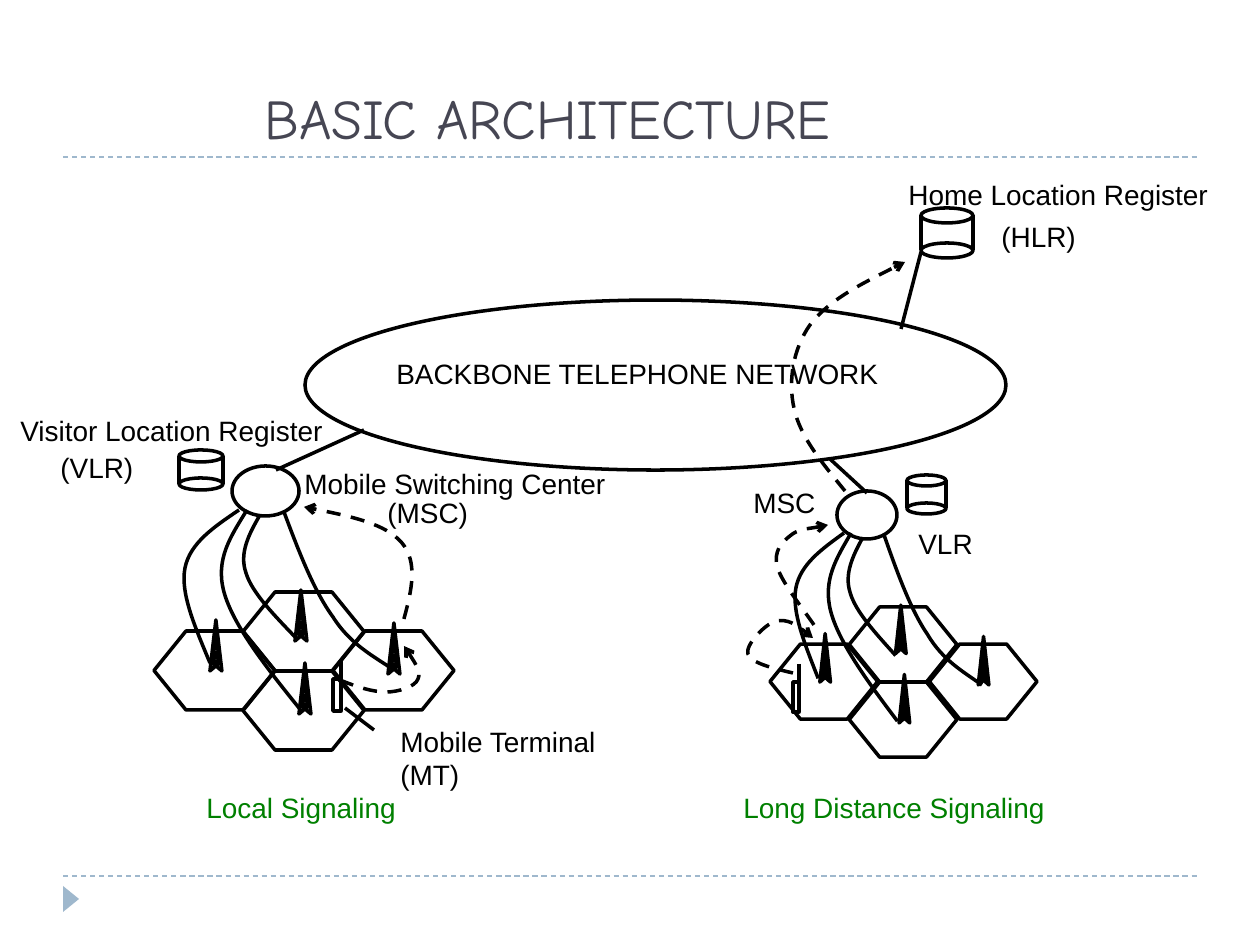
import pptx
import pptx.dml.color
import pptx.enum.dml
import pptx.enum.shapes
import pptx.enum.text
import pptx.oxml.ns
import pptx.util
from lxml import etree

EMU_PER_PX = 914400 / 126
BLACK = "000000"
GREEN = "008000"
PALE_BLUE = "9FB8CD"
SHAPES = pptx.enum.shapes.MSO_SHAPE
qn = pptx.oxml.ns.qn

CELL_SIZE = (121, 79)
CELLS = [(89, 0), (0, 39), (89, 79), (179, 39)]
ANTENNAS = [(56, 28), (234, 31), (145, 71), (141, -2)]
LINKS = [
    [(-29, 153), (-44, 117), (-59, 83), (-54, 58), (-49, 33), (-25, 17), (0, 0)],
    [(155, 160), (134, 146), (111, 134), (94, 107), (75, 81), (60, 42), (45, 2)],
    [(60, 198), (27, 157), (-6, 115), (-15, 82), (-24, 49), (-8, 26), (8, 0)],
    [(58, 129), (36, 106), (13, 83), (7, 63), (0, 43), (10, 24), (21, 5)],
]
SIGNALS = [
    [(404, 619), (412, 590), (418, 562), (402, 543), (386, 524), (345, 515), (304, 507)],
    [(340, 680), (357, 687), (373, 692), (386, 692), (398, 692),
     (415, 687), (418, 679), (421, 672), (413, 659), (404, 646)],
    [(793, 673), (772, 668), (751, 663), (748, 654), (745, 645),
     (765, 624), (776, 621), (788, 619), (800, 627), (813, 638)],
    [(814, 625), (798, 602), (781, 581), (777, 566), (774, 551),
     (781, 543), (790, 536), (798, 529), (822, 527), (828, 525)],
    [(845, 491), (823, 464), (800, 437), (794, 408), (788, 381),
     (793, 349), (810, 325), (829, 300), (867, 281), (905, 262)],
]
LABELS = [
    ("BACKBONE TELEPHONE NETWORK", 384, 350, 518, BLACK),
    ("(HLR)", 989, 213, 102, BLACK),
    ("Mobile Switching Center", 292, 460, 350, BLACK),
    ("Visitor Location Register", 8, 407, 357, BLACK),
    ("Mobile Terminal\n(MT)", 388, 718, 239, BLACK),
    ("MSC", 741, 479, 87, BLACK),
    ("VLR", 906, 520, 81, BLACK),
    ("Local Signaling", 194, 784, 232, GREEN),
    ("Long Distance Signaling", 731, 784, 352, GREEN),
    ("(MSC)", 375, 489, 106, BLACK),
    ("(VLR)", 48, 444, 100, BLACK),
    ("Home Location Register", 896, 171, 348, BLACK),
]


def px(length):
    return pptx.util.Emu(round(length * EMU_PER_PX))


def rgb(value):
    return pptx.dml.color.RGBColor.from_string(value)


def style_line(shape, color=BLACK, width=2, dashed=False):
    shape.line.color.rgb = rgb(color)
    shape.line.width = pptx.util.Pt(width)
    if dashed:
        shape.line.dash_style = pptx.enum.dml.MSO_LINE.DASH


def add_text(slide, text, left, top, width, height=47, size=16, font="Arial",
             color=BLACK, anchor=pptx.enum.text.MSO_ANCHOR.TOP, fit=True):
    box = slide.shapes.add_textbox(px(left), px(top), px(width), px(height))
    frame = box.text_frame
    frame.word_wrap = not fit
    if fit:
        frame.auto_size = pptx.enum.text.MSO_AUTO_SIZE.SHAPE_TO_FIT_TEXT
    frame.vertical_anchor = anchor
    frame.text = text
    for paragraph in frame.paragraphs:
        paragraph.font.size = pptx.util.Pt(size)
        paragraph.font.name = font
        paragraph.font.color.rgb = rgb(color)


def add_outline(shapes, kind, left, top, width, height):
    shape = shapes.add_shape(kind, px(left), px(top), px(width), px(height))
    shape.shadow.inherit = False
    shape.fill.background()
    style_line(shape)
    return shape


def add_line(shapes, start, end, **line_format):
    line = shapes.add_connector(pptx.enum.shapes.MSO_CONNECTOR.STRAIGHT,
                                px(start[0]), px(start[1]), px(end[0]), px(end[1]))
    style_line(line, **line_format)
    etree.SubElement(line._element.spPr, qn("a:effectLst"))


def add_path(shapes, points, closed=False, dashed=False):
    corners = [(px(x), px(y)) for x, y in points]
    builder = shapes.build_freeform(*corners[0], scale=1.0)
    builder.add_line_segments(corners[1:], close=closed)
    shape = builder.convert_to_shape()
    shape.shadow.inherit = False
    shape.fill.background()
    style_line(shape, dashed=dashed)
    return shape


def add_curve(shapes, points, signal=False):
    shape = add_path(shapes, points, dashed=signal)
    path = next(shape._element.iter(qn("a:path")))
    segments = path.findall(qn("a:lnTo"))
    for first in range(0, len(segments), 3):
        curve = etree.SubElement(path, qn("a:cubicBezTo"))
        for segment in segments[first:first + 3]:
            curve.append(segment[0])
            path.remove(segment)
    if signal:
        etree.SubElement(shape.line._get_or_add_ln(), qn("a:tailEnd"), type="arrow")


def add_register(slide, left, top, width, rim, drop):
    group = slide.shapes.add_group_shape().shapes
    middle = top + rim / 2
    for rim_top in (top, top + drop):
        add_outline(group, SHAPES.OVAL, left, rim_top, width, rim)
    for side in (left, left + width):
        add_line(group, (side, middle), (side, middle + drop))


def add_antenna(shapes, left, top, width, height):
    levels = [0.2, 0.3, 0.45, 0.64, 0.82]
    outline = [(0, 1), (0.5, 0), (1, 1)]
    for level in levels[:0:-1] + levels:
        outline += [((1 - level) / 2, level), ((1 + level) / 2, level)]
    add_path(shapes, [(left + x * width, top + y * height) for x, y in outline], closed=True)


def add_cells(slide, left, top, scale_x, scale_y):
    group = slide.shapes.add_group_shape().shapes
    for x, y in CELLS:
        cell = add_outline(group, SHAPES.HEXAGON, left + x * scale_x, top + y * scale_y,
                           CELL_SIZE[0] * scale_x, CELL_SIZE[1] * scale_y)
        cell.adjustments[0] = 0.405
    for x, y in ANTENNAS:
        add_antenna(group, left + x * scale_x, top + y * scale_y, 12 * scale_x, 51 * scale_y)


def add_links(slide, left, top, scale_x, scale_y):
    for link in LINKS:
        add_curve(slide.shapes, [(left + x * scale_x, top + y * scale_y) for x, y in link])


def add_terminal(slide, left, top, width, height):
    group = slide.shapes.add_group_shape().shapes
    add_outline(group, SHAPES.RECTANGLE, left, top, width, height)
    add_line(group, (left + width, top - 18), (left + width, top))


def add_frame(slide):
    for y in (876, 157):
        add_line(slide.shapes, (63, y), (1197, y), color=PALE_BLUE, width=0.75, dashed=True)
    marker = add_outline(slide.shapes, SHAPES.ISOSCELES_TRIANGLE, 58, 891, 26, 16)
    marker.rotation = 90
    marker.fill.solid()
    marker.fill.fore_color.rgb = rgb(PALE_BLUE)
    marker.line.fill.background()
    add_text(slide, "BASIC ARCHITECTURE", 252, 0, 927, height=157, size=32,
             font="Comic Neue", color="464653",
             anchor=pptx.enum.text.MSO_ANCHOR.BOTTOM, fit=False)


def main():
    presentation = pptx.Presentation()
    presentation.slide_width, presentation.slide_height = px(1260), px(945)
    slide = presentation.slides.add_slide(presentation.slide_layouts[6])
    add_frame(slide)
    for oval in [(305, 300, 701, 170), (232, 466, 67, 50), (837, 491, 60, 48)]:
        add_outline(slide.shapes, SHAPES.OVAL, *oval)
    for register in [(921, 208, 52, 15, 35), (179, 450, 44, 12, 28), (907, 475, 39, 11, 28)]:
        add_register(slide, *register)
    for start, end in [((276, 470), (364, 430)), ((830, 459), (867, 493)),
                       ((921, 252), (901, 329)), ((374, 730), (345, 708))]:
        add_line(slide.shapes, start, end)
    for cells, links, scale in [((154, 592), (239, 510), (1, 1)),
                                ((770, 607), (844, 533), (0.89, 0.95))]:
        add_cells(slide, *cells, *scale)
        add_links(slide, *links, *scale)
    add_terminal(slide, 333, 679, 8, 32)
    add_terminal(slide, 793, 682, 6, 30)
    for signal in SIGNALS:
        add_curve(slide.shapes, signal, signal=True)
    for text, left, top, width, color in LABELS:
        add_text(slide, text, left, top, width, color=color)
    presentation.save("out.pptx")


if __name__ == "__main__":
    main()
